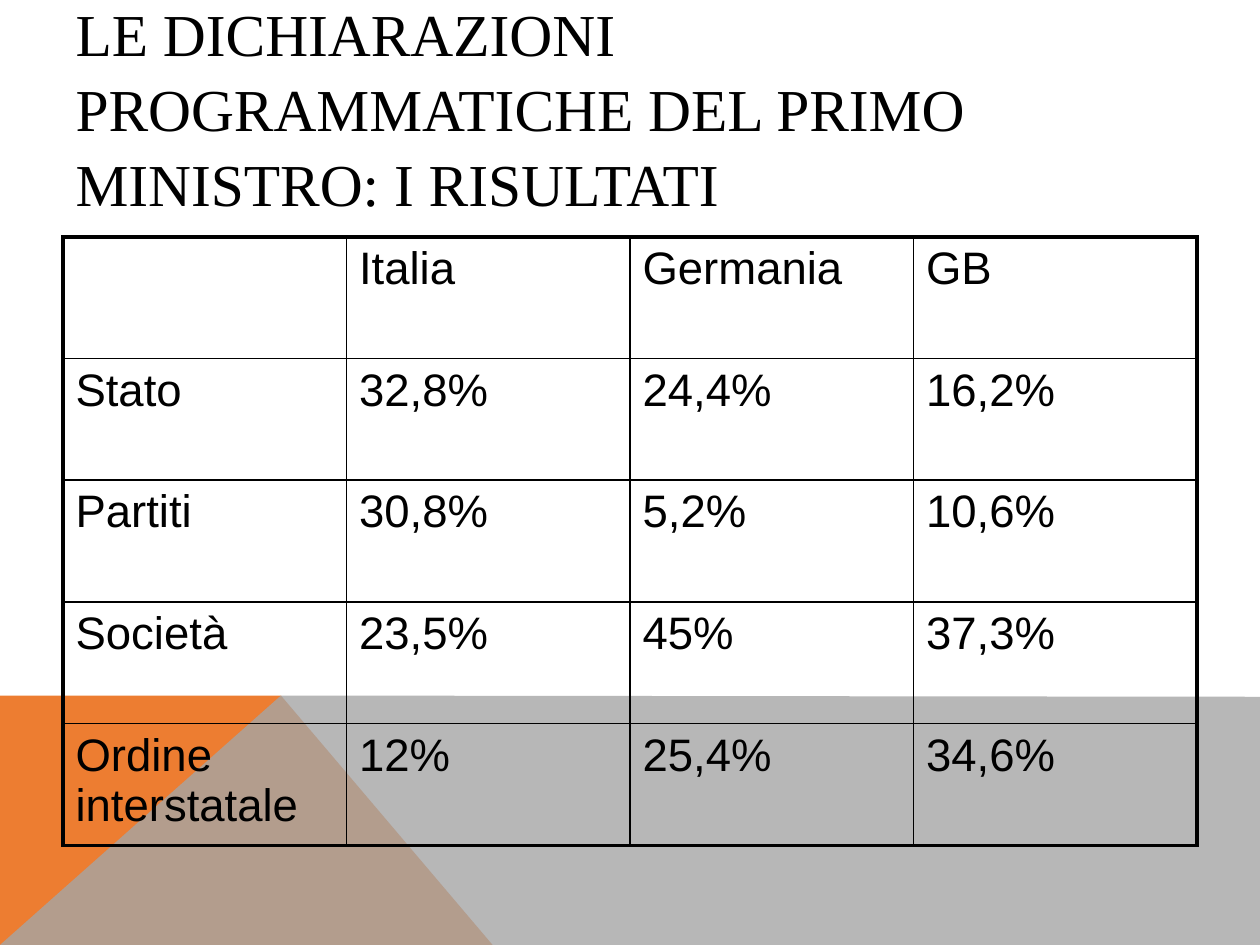
from lxml.etree import SubElement
from pptx import Presentation
from pptx.dml.color import RGBColor
from pptx.enum.text import MSO_ANCHOR, MSO_AUTO_SIZE, PP_ALIGN
from pptx.oxml.ns import qn
from pptx.util import Inches, Pt

COLORS = {"ink": "000000", "orange": "ED7D31", "gray": "A5A5A5"}
HEADING = "LE DICHIARAZIONI PROGRAMMATICHE DEL PRIMO MINISTRO: I RISULTATI"
RESULTS = [
    ["", "Italia", "Germania", "GB"],
    ["Stato", "32,8%", "24,4%", "16,2%"],
    ["Partiti", "30,8%", "5,2%", "10,6%"],
    ["Società", "23,5%", "45%", "37,3%"],
    ["Ordine interstatale", "12%", "25,4%", "34,6%"],
]
ORANGE_BAND = [(0, 7.5), (0, 5.52), (2.23, 5.52), (3.91, 7.5)]
GRAY_BAND = [(0, 7.5), (2.23, 5.52), (10, 5.53), (10, 7.5)]
INNER_LINE, OUTER_LINE = Pt(1), Pt(2.25)


def color(name):
    return RGBColor.from_string(COLORS[name])


def style_text(paragraph, font_name, size):
    paragraph.font.name = font_name
    paragraph.font.size = Pt(size)
    paragraph.font.color.rgb = color("ink")
    paragraph.alignment = PP_ALIGN.LEFT


def add_band(page, points, fill_name, opacity=100):
    corners = [(Inches(x), Inches(y)) for x, y in points]
    builder = page.shapes.build_freeform(*corners[0])
    builder.add_line_segments(corners[1:], close=True)
    band = builder.convert_to_shape()
    band.shadow.inherit = False
    band.line.fill.background()
    band.fill.solid()
    band.fill.fore_color.rgb = color(fill_name)
    if opacity < 100:
        tint = band._element.spPr.find(qn("a:solidFill")).find(qn("a:srgbClr"))
        SubElement(tint, qn("a:alpha"), val=str(opacity * 1000))


def set_title(page):
    title = page.shapes.title
    title.left, title.top = Inches(0.5), Inches(0.13)
    title.width, title.height = Inches(8.25), Inches(1.42)
    frame = title.text_frame
    frame.text = HEADING
    frame.word_wrap = True
    frame.auto_size = MSO_AUTO_SIZE.NONE
    frame.vertical_anchor = MSO_ANCHOR.MIDDLE
    paragraph = frame.paragraphs[0]
    style_text(paragraph, "Times New Roman", 34)
    paragraph.line_spacing = 1.05


def set_borders(cell, widths):
    properties = cell._tc.get_or_add_tcPr()
    for index, (side, width) in enumerate(widths.items()):
        line = SubElement(properties, qn(f"a:ln{side}"), w=str(width))
        fill = SubElement(line, qn("a:solidFill"))
        SubElement(fill, qn("a:srgbClr"), val=COLORS["ink"])
        properties.insert(index, line)


def add_results(page):
    row_count, column_count = len(RESULTS), len(RESULTS[0])
    table = page.shapes.add_table(
        row_count, column_count, Inches(0.5), Inches(1.88), Inches(9), Inches(4.83)
    ).table
    table.first_row = False
    table.horz_banding = False
    for r, values in enumerate(RESULTS):
        for c, value in enumerate(values):
            cell = table.cell(r, c)
            cell.text = value
            cell.fill.background()
            style_text(cell.text_frame.paragraphs[0], "Arial", 26)
            on_edge = {
                "L": c == 0,
                "R": c == column_count - 1,
                "T": r == 0,
                "B": r == row_count - 1,
            }
            set_borders(cell, {
                side: OUTER_LINE if outer else INNER_LINE
                for side, outer in on_edge.items()
            })


def main():
    deck = Presentation()
    deck.slide_width, deck.slide_height = Inches(10), Inches(7.5)
    page = deck.slides.add_slide(deck.slide_layouts[5])
    add_band(page, ORANGE_BAND, "orange")
    add_band(page, GRAY_BAND, "gray", 80)
    set_title(page)
    add_results(page)
    deck.save("out.pptx")


if __name__ == "__main__":
    main()
